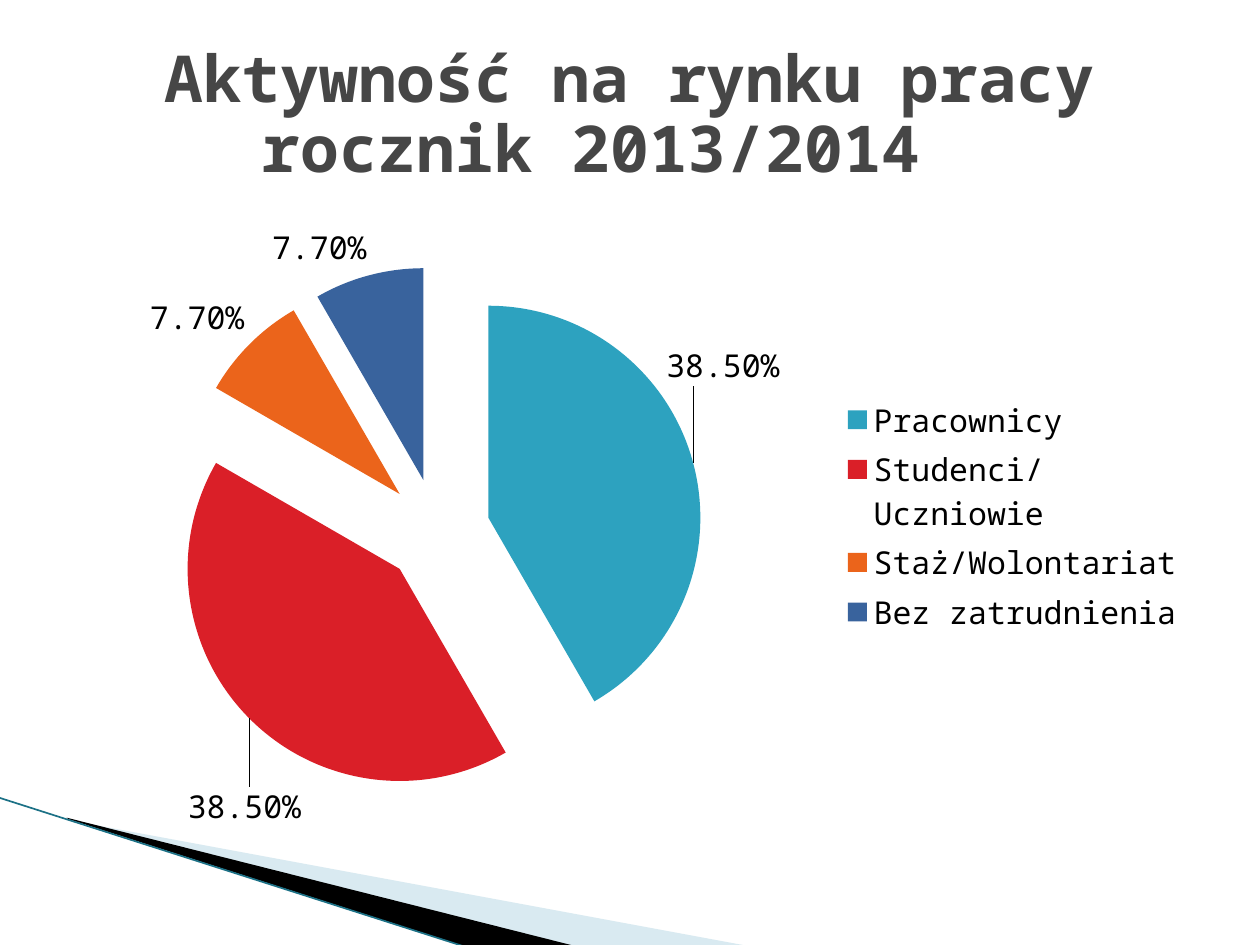
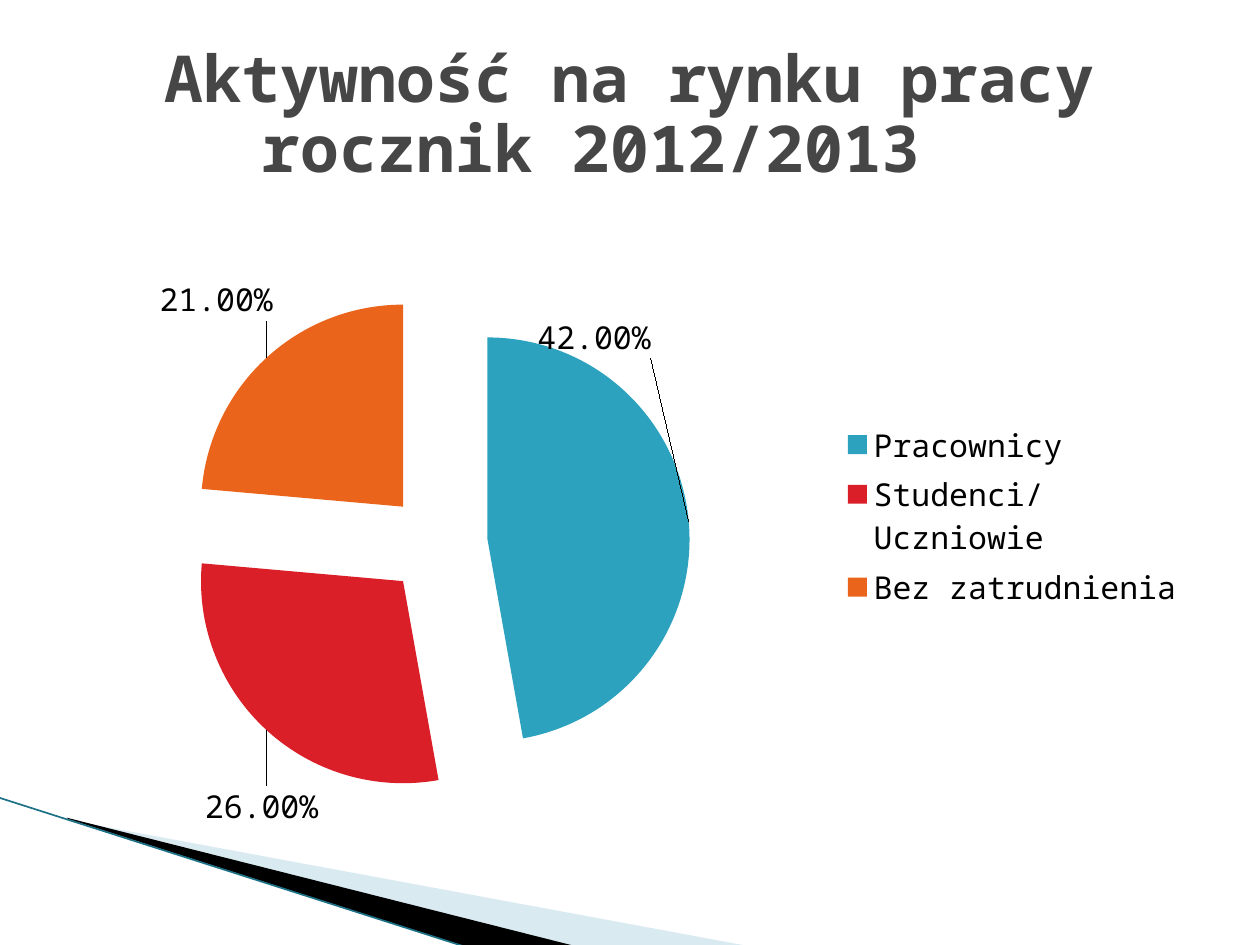
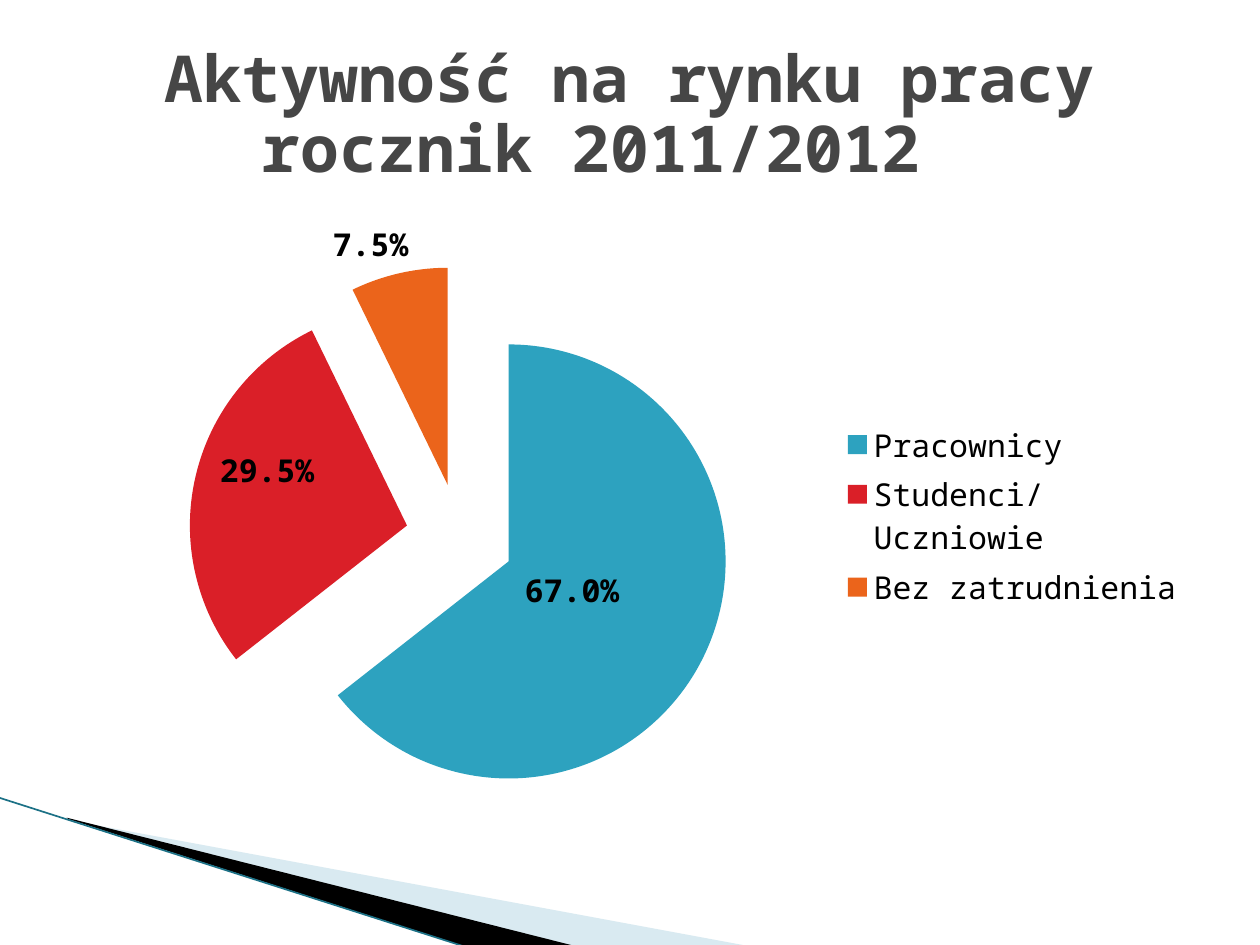
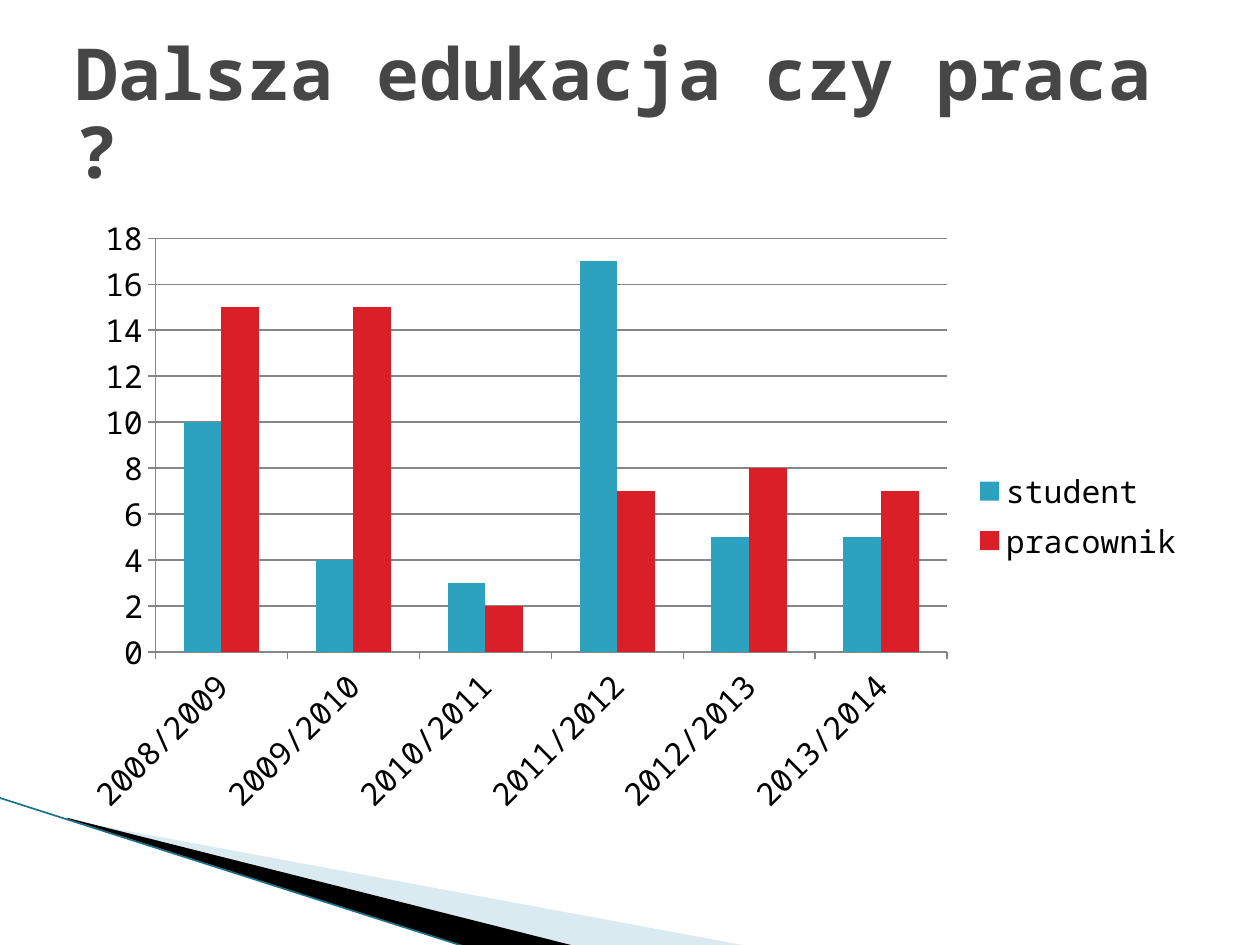
"""Build four slides of charts on graduates' work and further education."""
from lxml import etree
from pptx import Presentation
from pptx.chart.data import CategoryChartData
from pptx.dml.color import RGBColor
from pptx.enum.chart import XL_CHART_TYPE, XL_LABEL_POSITION, XL_LEGEND_POSITION, XL_TICK_MARK
from pptx.enum.shapes import MSO_CONNECTOR
from pptx.enum.text import MSO_ANCHOR, MSO_AUTO_SIZE, PP_ALIGN
from pptx.oxml import parse_xml
from pptx.oxml.ns import nsdecls, qn
from pptx.util import Inches, Pt

PIE, COLUMNS = XL_CHART_TYPE.PIE, XL_CHART_TYPE.COLUMN_CLUSTERED
OUTSIDE, CENTER = XL_LABEL_POSITION.OUTSIDE_END, XL_LABEL_POSITION.CENTER
LEGEND_RIGHT = XL_LEGEND_POSITION.RIGHT
TICK_OUT = XL_TICK_MARK.OUTSIDE
MIDDLE, NO_FIT = MSO_ANCHOR.MIDDLE, MSO_AUTO_SIZE.NONE
ALIGN_LEFT, ALIGN_CENTER = PP_ALIGN.LEFT, PP_ALIGN.CENTER
STRAIGHT = MSO_CONNECTOR.STRAIGHT

FONT = "Noto Sans Mono"
TITLE_COLOR, TEXT_COLOR, GRID_COLOR = "464646", "000000", "868686"
PALE_BAND, DARK_BAND, BAND_EDGE = "A0CBDC", "000000", "1C7186"
ACCENTS = ["2DA2BF", "DA1F28", "EB641B", "39639D"]
MARGIN = 0.05
CONTENT_WIDTH = 1 - 2 * MARGIN
TITLE_TOP, TITLE_HEIGHT = 0.04, 1 / 6
CHART_TOP, CHART_HEIGHT = 0.216, 0.66
PLOT_WIDTH = 0.56

WORKERS, STUDENTS, TRAINEES, JOBLESS = (
    "Pracownicy", "Studenci/Uczniowie", "Staż/Wolontariat", "Bez zatrudnienia")
PIES = [
    {"year": "2013/2014", "format": "0.00%", "bold": False, "plot": (0.05, 0.1, 0.85),
     "slices": [(WORKERS, 0.385, OUTSIDE, -0.03, -0.12),
                (STUDENTS, 0.385, OUTSIDE, 0.05, 0.1),
                (TRAINEES, 0.077, OUTSIDE, 0, 0),
                (JOBLESS, 0.077, OUTSIDE, 0, 0)]},
    {"year": "2012/2013", "format": "0.00%", "bold": False, "plot": (0.05, 0.14, 0.81),
     "slices": [(WORKERS, 0.42, OUTSIDE, -0.14, -0.26),
                (STUDENTS, 0.26, OUTSIDE, 0.05, 0.08),
                (JOBLESS, 0.21, OUTSIDE, 0.01, -0.05)]},
    {"year": "2011/2012", "format": "0.0%", "bold": True, "plot": (0.07, 0.1, 0.87),
     "slices": [(WORKERS, 0.67, CENTER, -0.03, -0.03),
                (STUDENTS, 0.295, CENTER, -0.03, -0.05),
                (JOBLESS, 0.075, OUTSIDE, 0.01, 0)]},
]
YEARS = [f"{year}/{year + 1}" for year in range(2008, 2014)]
COLUMN_SERIES = {"student": (10, 4, 3, 17, 5, 5), "pracownik": (15, 15, 2, 7, 8, 7)}


def color(hex_value):
    return RGBColor.from_string(hex_value)


def add_chart_slide(title_text, title_size, alignment, chart_type, chart_data):
    slide = presentation.slides.add_slide(title_only)
    title = slide.shapes.title
    title.left, title.top = int(width * MARGIN), int(height * TITLE_TOP)
    title.width, title.height = int(width * CONTENT_WIDTH), int(height * TITLE_HEIGHT)
    frame = title.text_frame
    frame.text = title_text
    frame.word_wrap, frame.auto_size, frame.vertical_anchor = True, NO_FIT, MIDDLE
    for paragraph in frame.paragraphs:
        paragraph.alignment = alignment
        paragraph.line_spacing = 0.9
        font = paragraph.runs[0].font
        font.name, font.size, font.bold = FONT, Pt(title_size), True
        font.color.rgb = color(TITLE_COLOR)
    chart = slide.shapes.add_chart(
        chart_type, int(width * MARGIN), int(height * CHART_TOP),
        int(width * CONTENT_WIDTH), int(height * CHART_HEIGHT), chart_data).chart
    chart.has_title = False
    chart.font.name, chart.font.size = FONT, Pt(18)
    chart.font.color.rgb = color(TEXT_COLOR)
    chart.has_legend = True
    chart.legend.position = LEGEND_RIGHT
    chart.legend.include_in_layout = False
    return slide, chart


presentation = Presentation()
presentation.slide_width, presentation.slide_height = Inches(10), Inches(7.5)
width, height = presentation.slide_width, presentation.slide_height
title_only = presentation.slide_layouts[5]

for pie in PIES:
    chart_data = CategoryChartData(number_format=pie["format"])
    chart_data.categories = [entry[0] for entry in pie["slices"]]
    chart_data.add_series("Series 1", [entry[1] for entry in pie["slices"]])
    slide, chart = add_chart_slide(
        f"Aktywność na rynku pracy\nrocznik {pie['year']}", 36.9, ALIGN_CENTER, PIE, chart_data)
    second_line = slide.shapes.title.text_frame.paragraphs[1]
    second_line.runs[0].font.size = Pt(36.9)
    second_line._p.get_or_add_pPr().set("marR", str(Inches(0.61)))

    plot = chart.plots[0]
    plot.vary_by_categories = True
    left, top, plot_height = pie["plot"]
    plot_area = plot._element.getparent()
    for old_layout in plot_area.findall(qn("c:layout")):
        plot_area.remove(old_layout)
    plot_area.insert(0, parse_xml(
        f'<c:layout {nsdecls("c")}><c:manualLayout><c:layoutTarget val="inner"/>'
        f'<c:xMode val="edge"/><c:yMode val="edge"/><c:x val="{left}"/><c:y val="{top}"/>'
        f'<c:w val="{PLOT_WIDTH}"/><c:h val="{plot_height}"/></c:manualLayout></c:layout>'))
    series = plot.series[0]
    series._element.find(qn("c:tx")).addnext(
        parse_xml(f'<c:explosion {nsdecls("c")} val="25"/>'))

    for index, (_, _, position, shift_x, shift_y) in enumerate(pie["slices"]):
        point = series.points[index]
        point.format.fill.solid()
        point.format.fill.fore_color.rgb = color(ACCENTS[index])
        label = point.data_label
        label.font.name, label.font.size, label.font.bold = FONT, Pt(18), pie["bold"]
        label.font.color.rgb = color(TEXT_COLOR)
        label.position = position
        label_element = series._element.findall(".//" + qn("c:dLbl"))[index]
        label_element.insert(1, parse_xml(
            f'<c:layout {nsdecls("c")}><c:manualLayout><c:x val="{shift_x}"/>'
            f'<c:y val="{shift_y}"/></c:manualLayout></c:layout>'))
        label_element.insert(2, parse_xml(
            f'<c:numFmt {nsdecls("c")} formatCode="{pie["format"]}" sourceLinked="0"/>'))
    for leader_lines in series._element.iter(qn("c:showLeaderLines")):
        leader_lines.set("val", "0" if pie["bold"] else "1")

chart_data = CategoryChartData()
chart_data.categories = YEARS
for name, values in COLUMN_SERIES.items():
    chart_data.add_series(name, values)
slide, chart = add_chart_slide("Dalsza edukacja czy praca ?", 41, ALIGN_LEFT, COLUMNS, chart_data)
plot = chart.plots[0]
plot.gap_width, plot.overlap, plot.vary_by_categories = 150, 0, False
for series, accent in zip(plot.series, ACCENTS):
    series.format.fill.solid()
    series.format.fill.fore_color.rgb = color(accent)
chart.value_axis.has_major_gridlines = True
chart.value_axis.minimum_scale, chart.value_axis.maximum_scale = 0, 18
chart.value_axis.major_unit = 2
for axis in (chart.category_axis, chart.value_axis):
    axis.major_tick_mark = TICK_OUT
for part in (chart.category_axis, chart.value_axis, chart.value_axis.major_gridlines):
    part.format.line.color.rgb = color(GRID_COLOR)
    part.format.line.width = Pt(0.75)

decorations = []
for fill, points in [
        (PALE_BAND, [(0.55, 6.51), (5.95, 7.51), (4.56, 7.51), (0.55, 6.5)]),
        (DARK_BAND, [(0.53, 6.49), (4.57, 7.51), (3.72, 7.52), (0.54, 6.5)])]:
    corners = [(Inches(x), Inches(y)) for x, y in points]
    builder = slide.shapes.build_freeform(*corners[0])
    builder.add_line_segments(corners[1:], close=True)
    band = builder.convert_to_shape()
    band.shadow.inherit = False
    band.fill.solid()
    band.fill.fore_color.rgb = color(fill)
    band.line.fill.background()
    decorations.append(band)
pale_color = decorations[0].element.find(".//" + qn("a:srgbClr"))
etree.SubElement(pale_color, qn("a:alpha")).set("val", "40000")
edge = slide.shapes.add_connector(
    STRAIGHT, Inches(-0.01), Inches(6.33), Inches(3.71), Inches(7.52))
edge.line.color.rgb = color(BAND_EDGE)
edge.line.width = Pt(0.95)
etree.SubElement(edge.element.spPr, qn("a:effectLst"))
decorations.append(edge)

master_tree = presentation.slide_master.shapes.element
for index, decoration in enumerate(decorations):
    decoration.element.find(".//" + qn("p:cNvPr")).set("id", str(20 + index))
    master_tree.insert(2 + index, decoration.element)

presentation.save("out.pptx")
